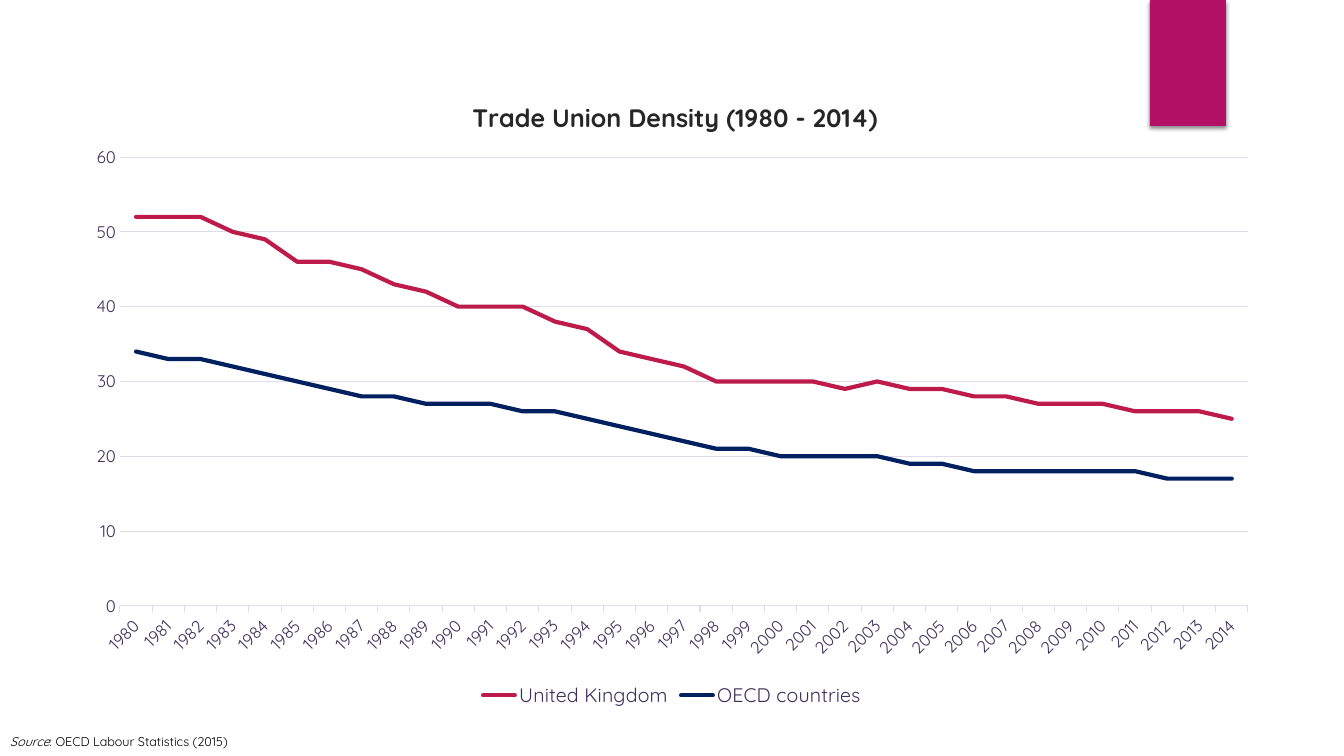
from lxml import etree
from pptx import Presentation
from pptx.chart.data import CategoryChartData
from pptx.dml.color import RGBColor
from pptx.enum.chart import XL_CHART_TYPE as CT, XL_LEGEND_POSITION as LP, XL_TICK_MARK as TM
from pptx.enum.shapes import MSO_SHAPE as SHAPE
from pptx.enum.text import MSO_AUTO_SIZE as FIT
from pptx.oxml import parse_xml
from pptx.oxml.ns import nsdecls, qn
from pptx.util import Emu, Pt

PX = 12192000 / 1344
FONT = "Quicksand"
BLACK = RGBColor(0x00, 0x00, 0x00)
CHARCOAL = RGBColor(0x26, 0x26, 0x26)
PLUM = RGBColor(0x3B, 0x30, 0x59)
LILAC = RGBColor(0xDF, 0xDB, 0xEB)
MAGENTA = RGBColor(0xB3, 0x11, 0x66)
CRIMSON = RGBColor(0xBD, 0x1B, 0x4C)
NAVY = RGBColor(0x00, 0x20, 0x60)

YEARS = [str(year) for year in range(1980, 2015)]
DENSITY = {
    "United Kingdom": (CRIMSON, [
        52, 52, 52, 50, 49, 46, 46, 45, 43, 42, 40, 40, 40, 38, 37, 34, 33, 32,
        30, 30, 30, 30, 29, 30, 29, 29, 28, 28, 27, 27, 27, 26, 26, 26, 25]),
    "OECD countries": (NAVY, [
        34, 33, 33, 32, 31, 30, 29, 28, 28, 27, 27, 27, 26, 26, 25, 24, 23, 22,
        21, 21, 20, 20, 20, 20, 19, 19, 18, 18, 18, 18, 18, 18, 17, 17, 17]),
}


def px(*lengths):
    return [Emu(round(n * PX)) for n in lengths]


class Deck:
    def __init__(self):
        self.prs = Presentation()
        self.prs.slide_width, self.prs.slide_height = px(1344, 756)
        self.s = self.prs.slides.add_slide(self.prs.slide_layouts[6])

    def font(self, font, size, color, **extra):
        for name, value in {"name": FONT, "size": Pt(size), **extra}.items():
            setattr(font, name, value)
        font.color.rgb = color

    def line(self, line, color, width):
        line.color.rgb = color
        line.width = Pt(width)

    def tab(self, box, color):
        sp = self.s.shapes.add_shape(SHAPE.RECTANGLE, *px(*box))
        sp.fill.solid()
        sp.fill.fore_color.rgb = color
        sp.line.fill.background()
        sp._element.spPr.append(parse_xml(
            f'<a:effectLst {nsdecls("a")}>'
            '<a:outerShdw blurRad="38100" dist="25400" dir="5400000" rotWithShape="0">'
            '<a:srgbClr val="000000"><a:alpha val="45000"/></a:srgbClr>'
            '</a:outerShdw></a:effectLst>'))

    def text(self, box, runs, size):
        tf = self.s.shapes.add_textbox(*px(*box)).text_frame
        tf.word_wrap = False
        tf.auto_size = FIT.SHAPE_TO_FIT_TEXT
        for words, italic in runs:
            r = tf.paragraphs[0].add_run()
            r.text = words
            self.font(r.font, size, BLACK, italic=italic)

    def place(self, parent, index, **parts):
        """Give a chart part a manual layout, as fractions of the chart."""
        for old in parent.findall(qn("c:layout")):
            parent.remove(old)
        layout = parse_xml(f'<c:layout {nsdecls("c")}><c:manualLayout/></c:layout>')
        for tag, value in parts.items():
            etree.SubElement(layout[0], qn(f"c:{tag}")).set("val", str(value))
        parent.insert(index, layout)

    def line_chart(self, box, title, years, series):
        data = CategoryChartData(number_format="#,##0")
        data.categories = years
        for name, (_, values) in series.items():
            data.add_series(name, values)
        chart = self.s.shapes.add_chart(CT.LINE, *px(*box), data).chart
        self.font(chart.font, 10, BLACK)

        # Title and plot area
        chart.has_title = True
        tf = chart.chart_title.text_frame
        tf.text = title
        self.font(tf.paragraphs[0].runs[0].font, 18, CHARCOAL, bold=True)
        self.place(chart.chart_title._element, 1,
                   xMode="edge", yMode="edge", x=0.33, y=0.04)
        self.place(chart._chartSpace.chart.plotArea, 0, layoutTarget="inner",
                   xMode="edge", yMode="edge", x=0.04, y=0.137, w=0.94, h=0.698)

        # Axes
        years_axis, value_axis = chart.category_axis, chart.value_axis
        for axis, tick in ((years_axis, TM.OUTSIDE), (value_axis, TM.NONE)):
            axis.major_tick_mark, axis.minor_tick_mark = tick, TM.NONE
            self.font(axis.tick_labels.font, 12, PLUM)
        self.line(years_axis.format.line, LILAC, 0.75)
        years_axis._element.find(qn("c:txPr")).find(qn("a:bodyPr")).set("rot", "-2700000")
        for name, value in {"minimum_scale": 0, "maximum_scale": 60, "major_unit": 10}.items():
            setattr(value_axis, name, value)
        value_axis.format.line.fill.background()
        self.line(value_axis.major_gridlines.format.line, LILAC, 0.75)
        value_axis.tick_labels.number_format = "#,##0"
        value_axis.tick_labels.number_format_is_linked = False

        # Legend and series
        chart.has_legend = True
        chart.legend.position = LP.BOTTOM
        chart.legend.include_in_layout = False
        self.font(chart.legend.font, 14, PLUM)
        plot = chart.plots[0]
        plot.vary_by_categories = False
        for ser, (color, _) in zip(plot.series, series.values()):
            ser.smooth = False
            self.line(ser.format.line, color, 3)
            ser.format.line._ln.set("cap", "rnd")


def main():
    deck = Deck()
    # Corner tab
    deck.tab((1150, 0, 76, 126), MAGENTA)
    # Density chart
    deck.line_chart((72, 69, 1200, 643), "Trade Union Density (1980 - 2014)", YEARS, DENSITY)
    # Source line
    deck.text((0, 729, 251, 25),
              [("Source", True), (": OECD Labour Statistics (2015)", False)], 9)
    deck.prs.save("out.pptx")


if __name__ == "__main__":
    main()
